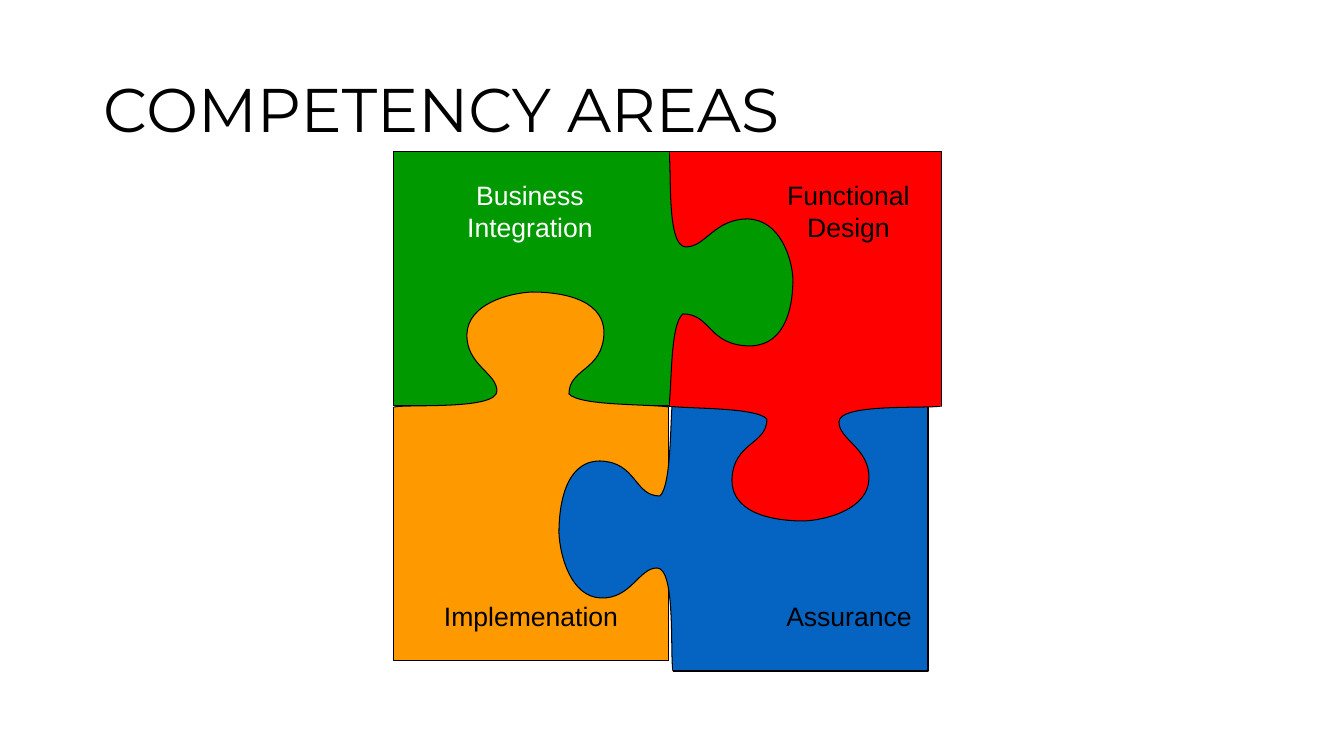
from collections import namedtuple

from lxml.etree import SubElement
from pptx import Presentation
from pptx.dml.color import RGBColor
from pptx.enum.text import MSO_ANCHOR as Anchor, MSO_AUTO_SIZE as AutoSize, PP_ALIGN as Align
from pptx.oxml.ns import qn
from pptx.util import Pt

PX = 914400 / 100.8

BLACK = RGBColor(0x00, 0x00, 0x00)
WHITE = RGBColor(0xFF, 0xFF, 0xFF)
GREEN = RGBColor(0x00, 0x99, 0x00)
RED = RGBColor(0xFF, 0x00, 0x00)
BLUE = RGBColor(0x05, 0x63, 0xC1)
ORANGE = RGBColor(0xFF, 0x99, 0x00)

KNOB_LENGTH, KNOB_REACH = 275, 115
KNOB = [
    (0, 0),
    (17, 3), (103, -3), (103, 16),
    (103, 34), (72, 42), (73, 73),
    (74, 103), (115, 114), (138, 115),
    (160, 115), (210, 111), (210, 74),
    (209, 36), (175, 39), (175, 13),
    (186, 1), (254, 3), (275, 0),
]

Piece = namedtuple("Piece", "color corner along depth reach")


def emu(px):
    return round(px * PX)


class PuzzleSlide:
    heading_font = "Montserrat"
    label_font = "Arial"

    def __init__(self, presentation):
        self.slide = presentation.slides.add_slide(presentation.slide_layouts[5])
        self.shapes = self.slide.shapes

    def place(self, shape, left, top, width, height):
        shape.left, shape.top = emu(left), emu(top)
        shape.width, shape.height = emu(width), emu(height)

    def style(self, paragraph, font, size, color, align):
        paragraph.alignment = align
        paragraph.font.name = font
        paragraph.font.size = Pt(size)
        paragraph.font.color.rgb = color

    def title(self, text, *box):
        heading = self.shapes.title
        self.place(heading, *box)
        frame = heading.text_frame
        frame.text = text
        frame.vertical_anchor = Anchor.MIDDLE
        frame.paragraphs[0].line_spacing = 0.9
        self.style(frame.paragraphs[0], self.heading_font, 44, BLACK, Align.LEFT)

    def outline(self, points, color):
        builder = self.shapes.build_freeform(*points[0], scale=PX)
        builder.add_line_segments(points[1:], close=False)
        shape = builder.convert_to_shape()
        shape.shadow.inherit = False
        shape.fill.solid()
        shape.fill.fore_color.rgb = color
        shape.line.color.rgb = BLACK
        shape.line.width = Pt(0.75)
        return shape

    def body(self, piece):
        x, y = piece.corner
        (ax, ay), (dx, dy) = piece.along, piece.depth
        corners = [(x, y), (x + dx, y + dy), (x + dx + ax, y + dy + ay), (x + ax, y + ay)]
        self.outline(corners, piece.color)

    def knob(self, piece):
        x, y = piece.corner
        (ax, ay), (rx, ry) = piece.along, piece.reach
        points = [
            (round(x + ax * a / KNOB_LENGTH + rx * r / KNOB_REACH),
             round(y + ay * a / KNOB_LENGTH + ry * r / KNOB_REACH))
            for a, r in KNOB
        ]
        shape = self.outline(points, piece.color)
        curve_path = next(shape.element.iter(qn("a:path")))
        segments = curve_path.findall(qn("a:lnTo"))
        for start in range(0, len(segments), 3):
            curve = SubElement(curve_path, qn("a:cubicBezTo"))
            for segment in segments[start:start + 3]:
                curve.append(segment[0])
                curve_path.remove(segment)

    def label(self, lines, color, *box):
        caption = self.shapes.add_textbox(*map(emu, box))
        frame = caption.text_frame
        frame.word_wrap = False
        frame.auto_size = AutoSize.SHAPE_TO_FIT_TEXT
        paragraph = frame.paragraphs[0]
        for number, line in enumerate(lines):
            if number:
                paragraph.add_line_break()
            paragraph.add_run().text = line
        self.style(paragraph, self.label_font, 19, color, Align.CENTER)


def main():
    presentation = Presentation()
    presentation.slide_width, presentation.slide_height = emu(1344), emu(756)
    puzzle = PuzzleSlide(presentation)
    puzzle.title("COMPETENCY AREAS", 93, 40, 1159, 146)

    implementation = Piece(ORANGE, (394, 407), (275, 0), (0, 254), (0, -115))
    assurance = Piece(BLUE, (673, 671), (0, -275), (255, 0), (-114, 0))
    design = Piece(RED, (942, 406), (-275, 0), (0, -254), (0, 115))
    integration = Piece(GREEN, (669, 152), (0, 254), (-275, 0), (124, 0))

    puzzle.body(implementation)
    for piece in (assurance, design, integration):
        puzzle.knob(piece)
        puzzle.body(piece)
    puzzle.knob(implementation)

    puzzle.label(["Business", "Integration"], WHITE, 456, 174, 148, 75)
    puzzle.label(["Functional", "Design"], BLACK, 776, 174, 145, 75)
    puzzle.label(["Implemenation"], BLACK, 432, 595, 198, 42)
    puzzle.label(["Assurance"], BLACK, 775, 595, 148, 42)
    presentation.save("out.pptx")


if __name__ == "__main__":
    main()
